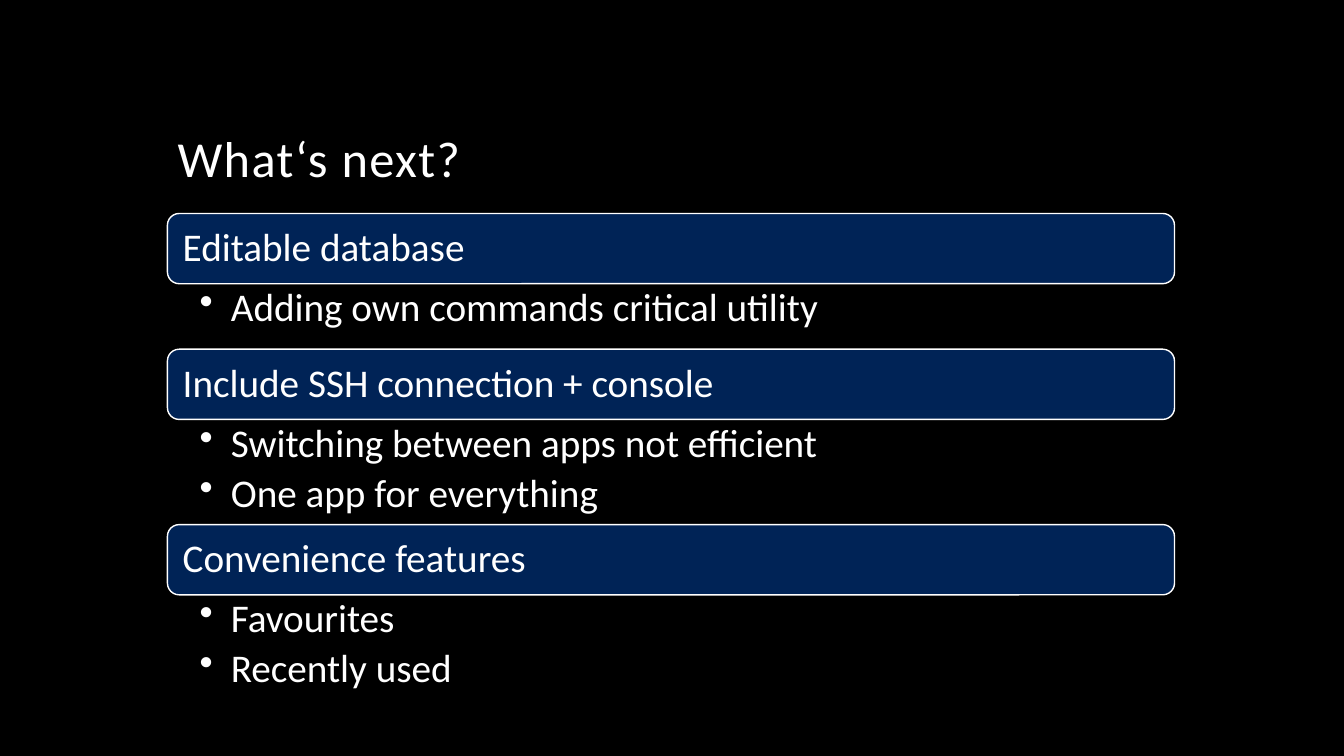
from lxml import etree
from pptx import Presentation
from pptx import util as u
from pptx.dml.color import RGBColor
from pptx.enum import shapes, text
from pptx.oxml.ns import qn

BLACK = RGBColor(0x00, 0x00, 0x00)
NAVY = RGBColor(0x00, 0x23, 0x56)
WHITE = RGBColor(0xFF, 0xFF, 0xFF)
FONT = "Calibri"

LEFT, WIDTH = u.Cm(4.22), u.Cm(25.38)
SECTIONS_TOP = u.Cm(5.38)
HEADER_HEIGHT = u.Cm(1.77)
TOPICS = [
    ("Editable database", ["Adding own commands critical utility"], u.Cm(1.65)),
    ("Include SSH connection + console",
     ["Switching between apps not efficient", "One app for everything"], u.Cm(2.65)),
    ("Convenience features", ["Favourites", "Recently used"], u.Cm(2.65)),
]


def format_paragraph(paragraph, size):
    """Give a paragraph the common alignment, spacing and font."""
    paragraph.alignment = text.PP_ALIGN.LEFT
    paragraph.line_spacing = 0.9
    paragraph.font.name = FONT
    paragraph.font.size = u.Pt(size)
    paragraph.font.color.rgb = WHITE


def add_bullet(paragraph):
    """Turn a paragraph into a second-level bullet with a hanging indent."""
    paragraph.level = 1
    properties = paragraph._p.get_or_add_pPr()
    properties.set("marL", str(u.Cm(0.79)))
    properties.set("indent", str(-u.Cm(0.79)))
    etree.SubElement(properties, qn("a:buChar")).set("char", "•")


def add_title(slide, wording, left, top, width, height):
    """Place the title, bottom-aligned and slightly letterspaced."""
    title = slide.shapes.title
    title.left, title.top, title.width, title.height = left, top, width, height
    frame = title.text_frame
    frame.text = wording
    frame.auto_size = text.MSO_AUTO_SIZE.NONE
    frame.vertical_anchor = text.MSO_ANCHOR.BOTTOM
    paragraph = frame.paragraphs[0]
    format_paragraph(paragraph, 36)
    paragraph.runs[0]._r.get_or_add_rPr().set("spc", "100")


def add_header(slide, wording, left, top, width, height):
    """Draw a rounded header bar with its wording."""
    header = slide.shapes.add_shape(
        shapes.MSO_SHAPE.ROUNDED_RECTANGLE, left, top, width, height)
    header.shadow.inherit = False
    header.fill.solid()
    header.fill.fore_color.rgb = NAVY
    header.line.color.rgb = WHITE
    header.line.width = u.Pt(1)
    frame = header.text_frame
    frame.margin_left = u.Cm(0.3)
    frame.vertical_anchor = text.MSO_ANCHOR.MIDDLE
    frame.text = wording
    format_paragraph(frame.paragraphs[0], 28)


def add_points(slide, points, left, top, width, height):
    """List the points below a header bar."""
    frame = slide.shapes.add_textbox(left, top, width, height).text_frame
    frame.word_wrap = True
    frame.margin_left, frame.margin_right = u.Cm(0.81), u.Cm(0.56)
    frame.margin_top = frame.margin_bottom = u.Cm(0.1)
    for index, point in enumerate(points):
        paragraph = frame.add_paragraph() if index else frame.paragraphs[0]
        paragraph.text = point
        add_bullet(paragraph)
        paragraph.space_after = u.Pt(5.5)
        format_paragraph(paragraph, 28)


def add_topics(slide, topics, left, top, width):
    """Stack each header bar and its points downwards."""
    for heading, points, points_height in topics:
        add_header(slide, heading, left, top, width, HEADER_HEIGHT)
        top += HEADER_HEIGHT
        add_points(slide, points, left, top, width, points_height)
        top += points_height


def main():
    """Build and save the presentation."""
    presentation = Presentation()
    presentation.slide_width = u.Cm(33.87)
    presentation.slide_height = u.Cm(19.05)
    slide = presentation.slides.add_slide(presentation.slide_layouts[5])
    slide.background.fill.solid()
    slide.background.fill.fore_color.rgb = BLACK
    add_title(slide, "What‘s next?", LEFT, u.Cm(1.07), u.Cm(25.4), u.Cm(3.81))
    add_topics(slide, TOPICS, LEFT, SECTIONS_TOP, WIDTH)
    presentation.save("out.pptx")


if __name__ == "__main__":
    main()
